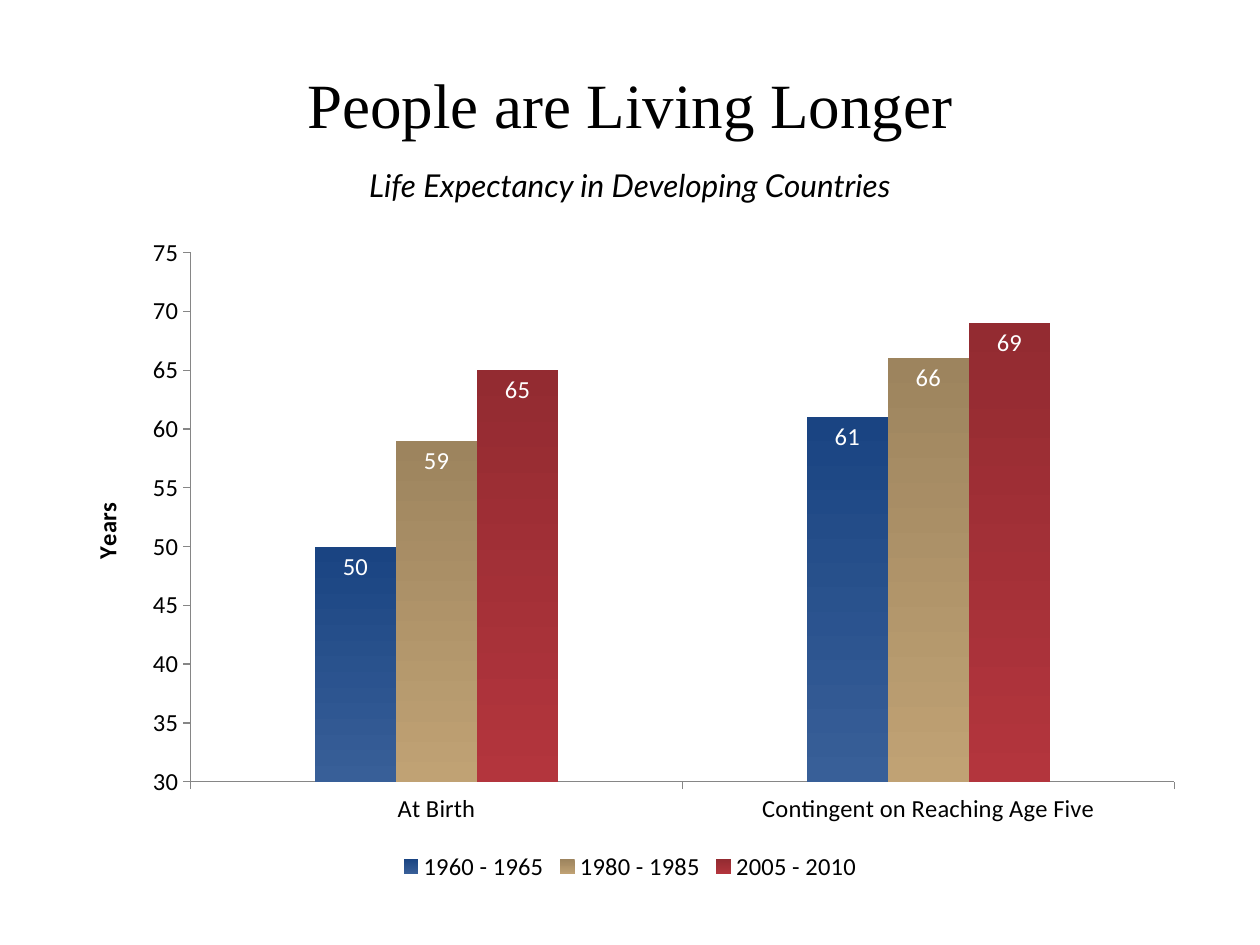
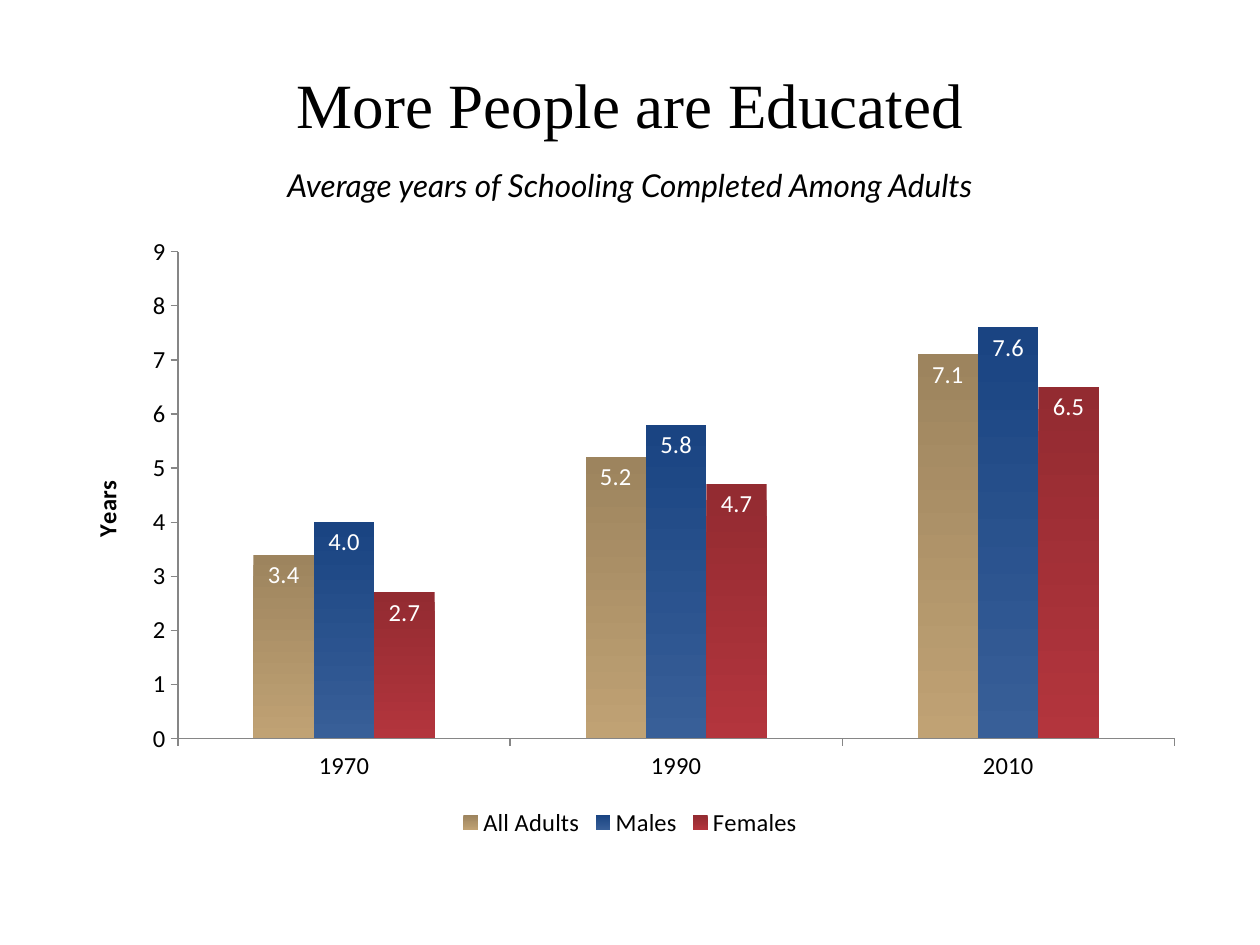
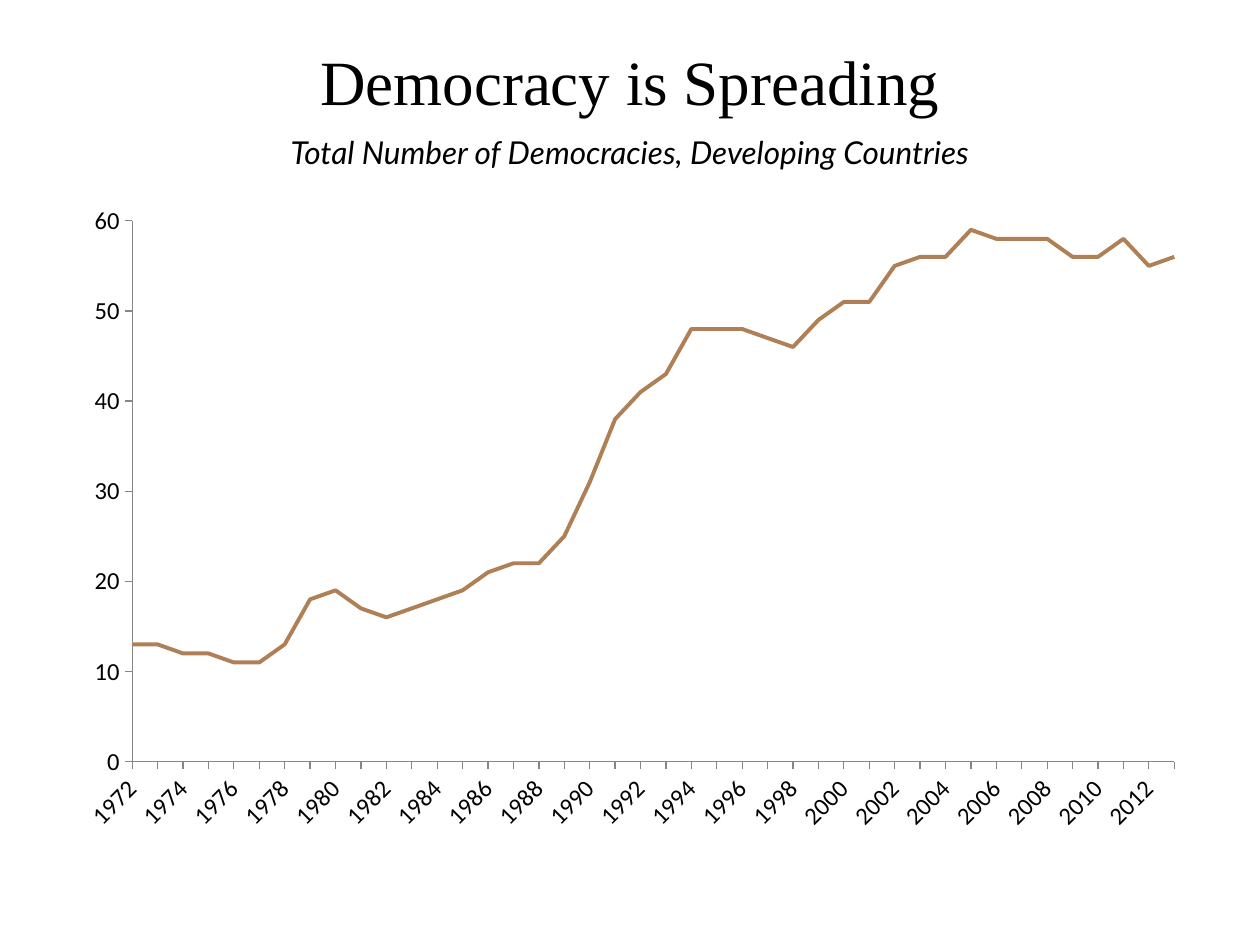
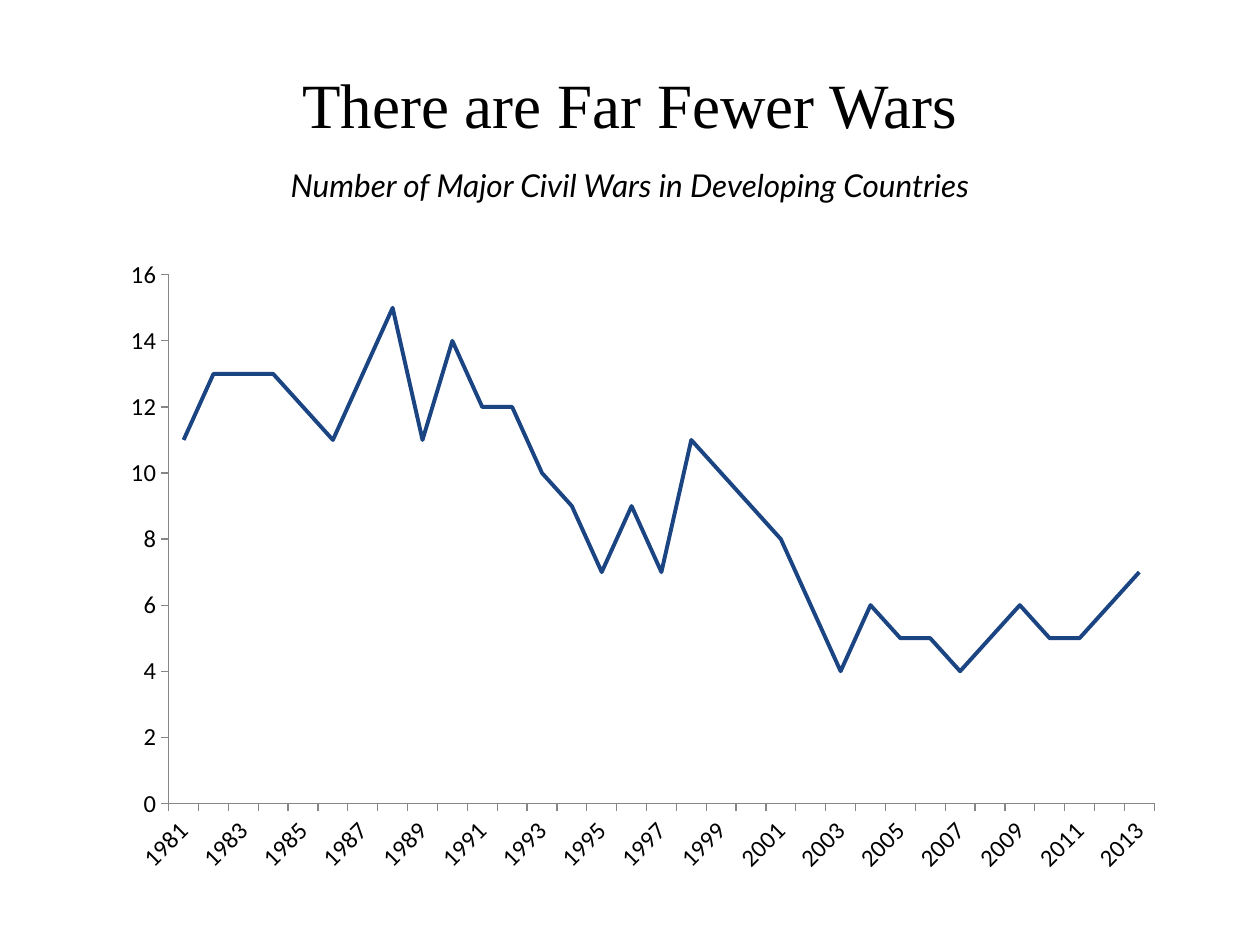
from pptx import Presentation
from pptx.chart.data import CategoryChartData as ChartData
from pptx.dml.color import RGBColor
from pptx.enum.chart import XL_CHART_TYPE as ChartType
from pptx.enum.chart import XL_LABEL_POSITION as LabelPosition
from pptx.enum.chart import XL_LEGEND_POSITION as LegendPosition
from pptx.enum.chart import XL_TICK_MARK as TickMark
from pptx.enum.text import MSO_ANCHOR as Anchor
from pptx.enum.text import PP_ALIGN as Align
from pptx.oxml import parse_xml
from pptx.oxml.ns import nsdecls, qn
from pptx.util import Inches, Pt

COLORS = {
    "text": "000000",
    "label": "FFFFFF",
    "axis": "868686",
    "blue": "1A4482",
    "light blue": "385F98",
    "tan": "9D845E",
    "light tan": "C0A274",
    "red": "932B31",
    "light red": "B3353D",
    "brown": "AF8056",
}
TITLE_FONT = "Times New Roman"
SUBTITLE_FONT = "Lato"
CHART_FONT = "Calibri"

DEMOCRACIES = [
    13, 13, 12, 12, 11, 11, 13, 18, 19, 17, 16, 17, 18, 19,
    21, 22, 22, 25, 31, 38, 41, 43, 48, 48, 48, 47, 46, 49,
    51, 51, 55, 56, 56, 59, 58, 58, 58, 56, 56, 58, 55, 56,
]
CIVIL_WARS = [
    11, 13, 13, 13, 12, 11, 13, 15, 11, 14, 12,
    12, 10, 9, 7, 9, 7, 11, 10, 9, 8, 6,
    4, 6, 5, 5, 4, 5, 6, 5, 5, 6, 7,
]


def rgb(name):
    """Return the named colour."""
    return RGBColor.from_string(COLORS[name])


def style_font(font, name, size, color="text", bold=False, italic=False):
    """Set the look of a font."""
    font.name = name
    font.size = Pt(size)
    font.bold = bold
    font.italic = italic
    font.color.rgb = rgb(color)


def add_line_of_text(page, text, top, height, anchor, font, size, italic=False):
    """Add one centred line across the page."""
    box = page.shapes.add_textbox(Inches(0.5), Inches(top), Inches(9), Inches(height))
    frame = box.text_frame
    frame.word_wrap = True
    frame.vertical_anchor = anchor
    para = frame.paragraphs[0]
    para.text = text
    para.alignment = Align.CENTER
    style_font(para.font, font, size, italic=italic)


def add_page(deck, title, subtitle, title_top=0.3, subtitle_top=1.27):
    """Add a blank page with its title and subtitle."""
    page = deck.slides.add_slide(deck.slide_layouts[6])
    add_line_of_text(page, title, title_top, 1.04, Anchor.MIDDLE, TITLE_FONT, 36)
    add_line_of_text(
        page, subtitle, subtitle_top, 0.52, Anchor.TOP, SUBTITLE_FONT, 18, italic=True
    )
    return page


def style_axis(axis):
    """Give an axis outside ticks, a grey line and no gridlines."""
    axis.has_major_gridlines = False
    axis.major_tick_mark = TickMark.OUTSIDE
    axis.minor_tick_mark = TickMark.NONE
    axis.format.line.color.rgb = rgb("axis")
    axis.format.line.width = Pt(0.75)
    style_font(axis.tick_labels.font, CHART_FONT, 14)


def add_chart(page, kind, area, categories, series, scale, number_format="General"):
    """Add a chart with the shared font, axes and value scale."""
    data = ChartData(number_format=number_format)
    data.categories = categories
    for name, values in series:
        data.add_series(name, values)
    chart = page.shapes.add_chart(kind, *map(Inches, area), data).chart
    chart.has_title = False
    chart.has_legend = False
    style_font(chart.font, CHART_FONT, 14)
    chart.plots[0].vary_by_categories = False
    style_axis(chart.category_axis)
    style_axis(chart.value_axis)
    axis = chart.value_axis
    axis.minimum_scale, axis.maximum_scale, axis.major_unit = scale
    axis.tick_labels.number_format = "0"
    axis.tick_labels.number_format_is_linked = False
    return chart


def add_column_chart(page, area, categories, series, colors, scale, gap, number_format):
    """Add labelled gradient columns with a legend and a Years axis."""
    chart = add_chart(
        page, ChartType.COLUMN_CLUSTERED, area, categories, series, scale, number_format
    )
    title = chart.value_axis.axis_title.text_frame
    title.text = "Years"
    style_font(title.paragraphs[0].font, CHART_FONT, 14, bold=True)
    chart.has_legend = True
    chart.legend.position = LegendPosition.BOTTOM
    chart.legend.include_in_layout = False
    style_font(chart.legend.font, CHART_FONT, 14)
    plot = chart.plots[0]
    plot.gap_width = gap
    plot.overlap = 0
    for columns, color in zip(plot.series, colors):
        fill = columns.format.fill
        fill.gradient()
        fill.gradient_angle = 270
        for stop, shade in zip(fill.gradient_stops, (color, f"light {color}")):
            stop.color.rgb = rgb(shade)
        labels = columns.data_labels
        labels.show_value = True
        labels.position = LabelPosition.INSIDE_END
        labels.number_format = number_format
        labels.number_format_is_linked = False
        style_font(labels.font, CHART_FONT, 14, "label")


def slant_year_labels(axis):
    """Slant the labels and show every second one."""
    element = axis._element
    element.find(qn("c:txPr")).find(qn("a:bodyPr")).set("rot", "-2700000")
    last = element.find(qn("c:noMultiLvlLbl"))
    for tag, step in (("tickLblSkip", 2), ("tickMarkSkip", 1)):
        last.addprevious(parse_xml(f'<c:{tag} {nsdecls("c")} val="{step}"/>'))


def set_crossing(axis, crossing):
    """Choose whether points sit on the ticks or between them."""
    element = axis._element
    for old in element.findall(qn("c:crossBetween")):
        element.remove(old)
    element.find(qn("c:crosses")).addnext(
        parse_xml(f'<c:crossBetween {nsdecls("c")} val="{crossing}"/>')
    )


def add_line_chart(page, area, first_year, values, color, scale, crossing):
    """Add one yearly line without a legend."""
    years = [str(first_year + step) for step in range(len(values))]
    chart = add_chart(page, ChartType.LINE, area, years, [("Series 1", values)], scale)
    line = chart.plots[0].series[0]
    line.smooth = False
    line.format.line.color.rgb = rgb(color)
    line.format.line.width = Pt(2.25)
    slant_year_labels(chart.category_axis)
    set_crossing(chart.value_axis, crossing)


def main():
    """Build and save the deck."""
    deck = Presentation()
    deck.slide_width, deck.slide_height = Inches(10), Inches(7.5)

    page = add_page(
        deck, "People are Living Longer", "Life Expectancy in Developing Countries"
    )
    add_column_chart(
        page,
        (0.5, 1.78, 9, 5.26),
        ["At Birth", "Contingent on Reaching Age Five"],
        [("1960 - 1965", [50, 61]), ("1980 - 1985", [59, 66]), ("2005 - 2010", [65, 69])],
        ["blue", "tan", "red"],
        scale=(30, 75, 5),
        gap=307,
        number_format="#,##0",
    )

    page = add_page(
        deck,
        "More People are Educated",
        "Average years of Schooling Completed Among Adults",
    )
    add_column_chart(
        page,
        (0.5, 1.78, 9, 4.91),
        ["1970", "1990", "2010"],
        [
            ("All Adults", [3.4, 5.2, 7.1]),
            ("Males", [4.0, 5.8, 7.6]),
            ("Females", [2.7, 4.7, 6.5]),
        ],
        ["tan", "blue", "red"],
        scale=(0, 9, 1),
        gap=250,
        number_format="0.0",
    )

    page = add_page(
        deck,
        "Democracy is Spreading",
        "Total Number of Democracies, Developing Countries",
        title_top=0.12,
        subtitle_top=1.01,
    )
    add_line_chart(
        page, (0.5, 1.53, 9, 5.17), 1972, DEMOCRACIES, "brown", (0, 60, 10), "midCat"
    )

    page = add_page(
        deck,
        "There are Far Fewer Wars",
        "Number of Major Civil Wars in Developing Countries",
    )
    add_line_chart(
        page, (0.87, 1.96, 8.46, 5.07), 1981, CIVIL_WARS, "blue", (0, 16, 2), "between"
    )

    deck.save("out.pptx")


if __name__ == "__main__":
    main()
